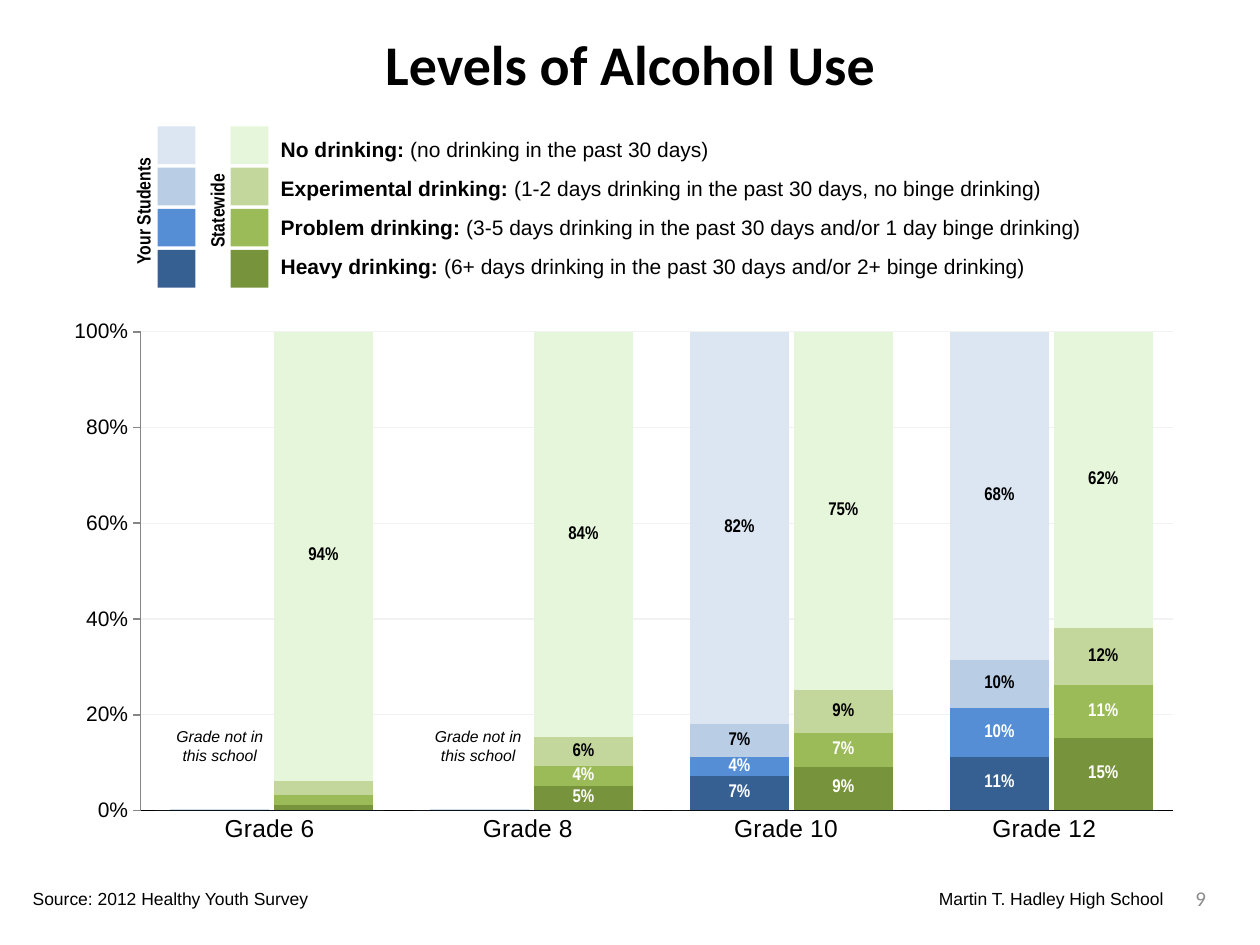
from lxml.etree import fromstring
from pptx import Presentation
from pptx.chart.data import CategoryChartData
from pptx.dml.color import RGBColor
from pptx.enum.chart import XL_CHART_TYPE as ChartType
from pptx.enum.chart import XL_LABEL_POSITION as LabelPos
from pptx.enum.chart import XL_TICK_LABEL_POSITION as TickLabels
from pptx.enum.chart import XL_TICK_MARK as Tick
from pptx.enum.shapes import MSO_SHAPE as Shape
from pptx.enum.text import MSO_ANCHOR as Anchor
from pptx.enum.text import PP_ALIGN as Align
from pptx.oxml.ns import qn
from pptx.util import Cm, Pt

COLORS = {
    "text": "000000", "light_text": "FFFFFF", "page_number": "8C8C8C",
    "axis": "868686", "grid": "F2F2F2",
    "students_none": "DCE6F2", "students_experimental": "B9CDE5",
    "students_problem": "558ED5", "students_heavy": "376092",
    "state_none": "E6F6DA", "state_experimental": "C3D69B",
    "state_problem": "9BBB59", "state_heavy": "77933C",
}
# Level, legend wording, legend width in cm
LEVELS = [
    ("none", "No drinking: ", "(no drinking in the past 30 days)", 9.22),
    ("experimental", "Experimental drinking: ",
     "(1-2 days drinking in the past 30 days, no binge drinking)", 15.98),
    ("problem", "Problem drinking: ",
     "(3-5 days drinking in the past 30 days and/or 1 day binge drinking)", 16.79),
    ("heavy", "Heavy drinking: ",
     "(6+ days drinking in the past 30 days and/or 2+ binge drinking)", 15.65),
]
# Heavy to none, each as (statewide, your students)
GRADES = {
    "Grade 6": [(0.01, 0), (0.02, 0), (0.03, 0), (0.94, 0)],
    "Grade 8": [(0.05, 0), (0.04, 0), (0.06, 0), (0.84, 0)],
    "Grade 10": [(0.09, 0.07), (0.07, 0.04), (0.09, 0.07), (0.75, 0.82)],
    "Grade 12": [(0.15, 0.11), (0.11, 0.10), (0.12, 0.10), (0.62, 0.68)],
}
CHART_NS = "http://schemas.openxmlformats.org/drawingml/2006/chart"
DRAW_NS = "http://schemas.openxmlformats.org/drawingml/2006/main"


def rgb(name):
    return RGBColor.from_string(COLORS[name])


def place_plot(chart, x, y, w, h):
    """Fix the inner plot area as fractions of the chart and clear backgrounds."""
    root = chart.element
    plot_area = root.find(".//" + qn("c:plotArea"))
    for layout in plot_area.findall(qn("c:layout")):
        plot_area.remove(layout)
    sizes = "".join(f'<c:{tag} val="{value}"/>'
                    for tag, value in zip("xywh", (x, y, w, h)))
    plot_area.insert(0, fromstring(
        f'<c:layout xmlns:c="{CHART_NS}"><c:manualLayout>'
        '<c:layoutTarget val="inner"/><c:xMode val="edge"/><c:yMode val="edge"/>'
        f'{sizes}</c:manualLayout></c:layout>'))
    clear = (f'<c:spPr xmlns:c="{CHART_NS}" xmlns:a="{DRAW_NS}">'
             '<a:noFill/><a:ln><a:noFill/></a:ln></c:spPr>')
    plot_area.append(fromstring(clear))
    root.find(qn("c:chart")).addnext(fromstring(clear))


class SlideBuilder:
    body_font, label_font, head_font = "Arial", "Arial Narrow", "Calibri"

    def __init__(self, page):
        self.page = page

    def style(self, font, size, color="text", name=None, bold=False, italic=False):
        font.name, font.size = name or self.body_font, Pt(size)
        font.bold, font.italic = bold, italic
        font.color.rgb = rgb(color)

    def add_span(self, para, text, size, **look):
        span = para.add_run()
        span.text = text
        self.style(span.font, size, **look)

    def title(self, text, left, top, width, height):
        box = self.page.shapes.title
        box.left, box.top, box.width, box.height = map(Cm, (left, top, width, height))
        box.text_frame.vertical_anchor = Anchor.MIDDLE
        para = box.text_frame.paragraphs[0]
        para.alignment = Align.CENTER
        self.add_span(para, text, 32, name=self.head_font, bold=True)

    def text(self, spans, left, top, width, height, size, align=Align.LEFT,
             anchor=Anchor.TOP, wrap=False, rotation=0, **look):
        """spans holds (text, bold) pairs."""
        box = self.page.shapes.add_textbox(*map(Cm, (left, top, width, height)))
        box.rotation = rotation
        frame = box.text_frame
        frame.word_wrap, frame.vertical_anchor = wrap, anchor
        para = frame.paragraphs[0]
        para.alignment = align
        for words, bold in spans:
            self.add_span(para, words, size, bold=bold, **look)
        return box

    def swatch(self, color, left, top, side):
        box = self.page.shapes.add_shape(Shape.RECTANGLE, *map(Cm, (left, top, side, side)))
        box.shadow.inherit = False
        box.fill.solid()
        box.fill.fore_color.rgb = rgb(color)
        box.line.fill.background()

    def chart(self, data, left, top, width, height, plot_box, gap):
        chart = self.page.shapes.add_chart(
            ChartType.COLUMN_STACKED_100, *map(Cm, (left, top, width, height)), data).chart
        chart.has_title = chart.has_legend = False
        self.style(chart.font, 10, name=self.head_font)
        plot = chart.plots[0]
        plot.gap_width, plot.overlap, plot.vary_by_categories = gap, 100, False
        scale = chart.value_axis
        scale.minimum_scale, scale.maximum_scale, scale.major_unit = 0, 1, 0.2
        chart.category_axis.major_tick_mark = Tick.NONE
        place_plot(chart, *plot_box)
        return chart

    def axes_chart(self, *frame):
        """Chart of empty columns that carries the shared axes and grid."""
        data = CategoryChartData(number_format="0%")
        data.categories = list(GRADES)
        data.add_series("Series 1", [0] * len(GRADES))
        chart = self.chart(data, *frame, (0.06, 0.031, 0.938, 0.884), 13)
        grades, scale = chart.category_axis, chart.value_axis
        self.style(grades.tick_labels.font, 14)
        self.style(scale.tick_labels.font, 12)
        scale.tick_labels.number_format = "0%"
        scale.tick_labels.number_format_is_linked = False
        scale.major_tick_mark = Tick.OUTSIDE
        grid = scale.major_gridlines.format
        for line, color, width in ((grades.format.line, "text", 1),
                                   (scale.format.line, "axis", 1),
                                   (grid.line, "grid", 0.75)):
            line.color.rgb, line.width = rgb(color), Pt(width)

    def grade_chart(self, values, *frame):
        data = CategoryChartData(number_format="0%")
        data.categories = ["1", "2"]
        for number, pair in enumerate(values, 1):
            data.add_series(f"Series {number}", pair)
        chart = self.chart(data, *frame, (0, 0.02, 1, 0.937), 5)
        chart.category_axis.reverse_order = True
        chart.value_axis.has_major_gridlines = False
        for axis in (chart.category_axis, chart.value_axis):
            axis.tick_label_position = TickLabels.NONE
            axis.major_tick_mark = Tick.NONE
            axis.format.line.fill.background()
        for series, (level, *_) in zip(chart.plots[0].series, reversed(LEVELS)):
            for point, group in enumerate(("state", "students")):
                fill = series.points[point].format.fill
                fill.solid()
                fill.fore_color.rgb = rgb(f"{group}_{level}")
            labels = series.data_labels
            labels.show_value, labels.position = True, LabelPos.CENTER
            labels.number_format = '[<0.04]" ";0%'
            labels.number_format_is_linked = False
            color = "light_text" if level in ("heavy", "problem") else "text"
            self.style(labels.font, 10.5, color, self.label_font, bold=True)


def main():
    deck = Presentation()
    deck.slide_width, deck.slide_height = Cm(25.4), Cm(19.05)
    slide = SlideBuilder(deck.slides.add_slide(deck.slide_layouts[5]))
    slide.title("Levels of Alcohol Use", 0.64, 0.43, 24.13, 1.7)

    slide.axes_chart(1.5, 6.35, 22.2, 10.92)
    for column, values in enumerate(GRADES.values()):
        slide.grade_chart(values, 3.38 + 5.24 * column, 6.48, 4.19, 10.29)
        if not any(students for _, students in values):
            note = slide.text([("Grade not in this school", False)],
                              3.48 + 5.21 * column, 11.86, 1.9, 3.81, 9,
                              Align.CENTER, Anchor.BOTTOM, True, italic=True)
            frame = note.text_frame
            frame.margin_left = frame.margin_right = frame.margin_top = 0
            frame.margin_bottom = Cm(0.25)

    for row, (level, name, meaning, width) in enumerate(LEVELS):
        for group, left in (("students", 3.18), ("state", 4.65)):
            slide.swatch(f"{group}_{level}", left, 2.55 + 0.83 * row, 0.76)
        slide.text([(name, True), (meaning, False)],
                   5.41, 2.62 + 0.79 * row, width, 0.76, 12)
    for label, left, width in (("Your Students", 1.55, 2.69), ("Statewide", 3.38, 2.01)):
        slide.text([(label, True)], left, 3.87, width, 0.74, 11,
                   rotation=270, name=slide.label_font)

    slide.text([("Source: 2012 Healthy Youth Survey", False)], 0.41, 17.78, 6.15, 0.69, 10)
    slide.text([("Martin T. Hadley High School", False)], 8.26, 17.78, 15.44, 0.69, 10,
               Align.RIGHT, wrap=True)
    slide.text([("9", False)], 23.29, 17.6, 1.27, 1.02, 12, Align.RIGHT, Anchor.MIDDLE,
               True, color="page_number", name=slide.head_font)
    deck.save("out.pptx")


if __name__ == "__main__":
    main()
